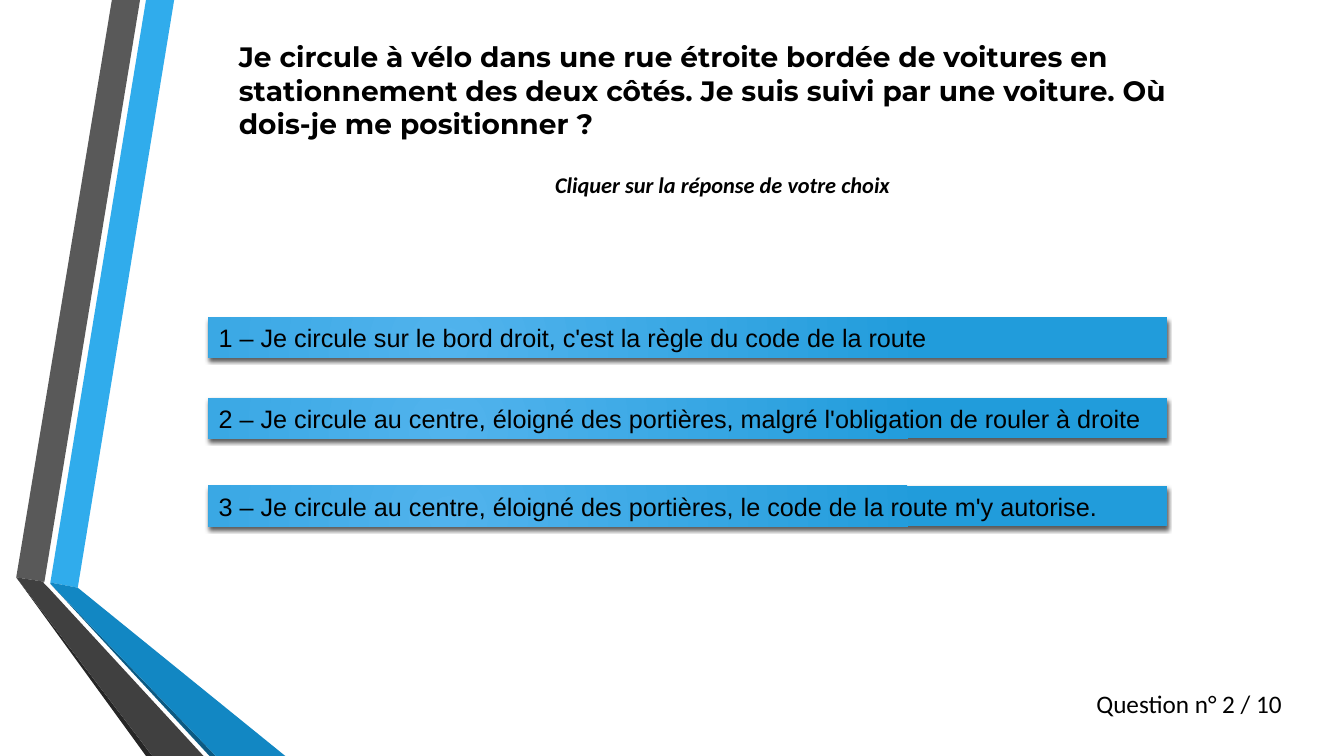
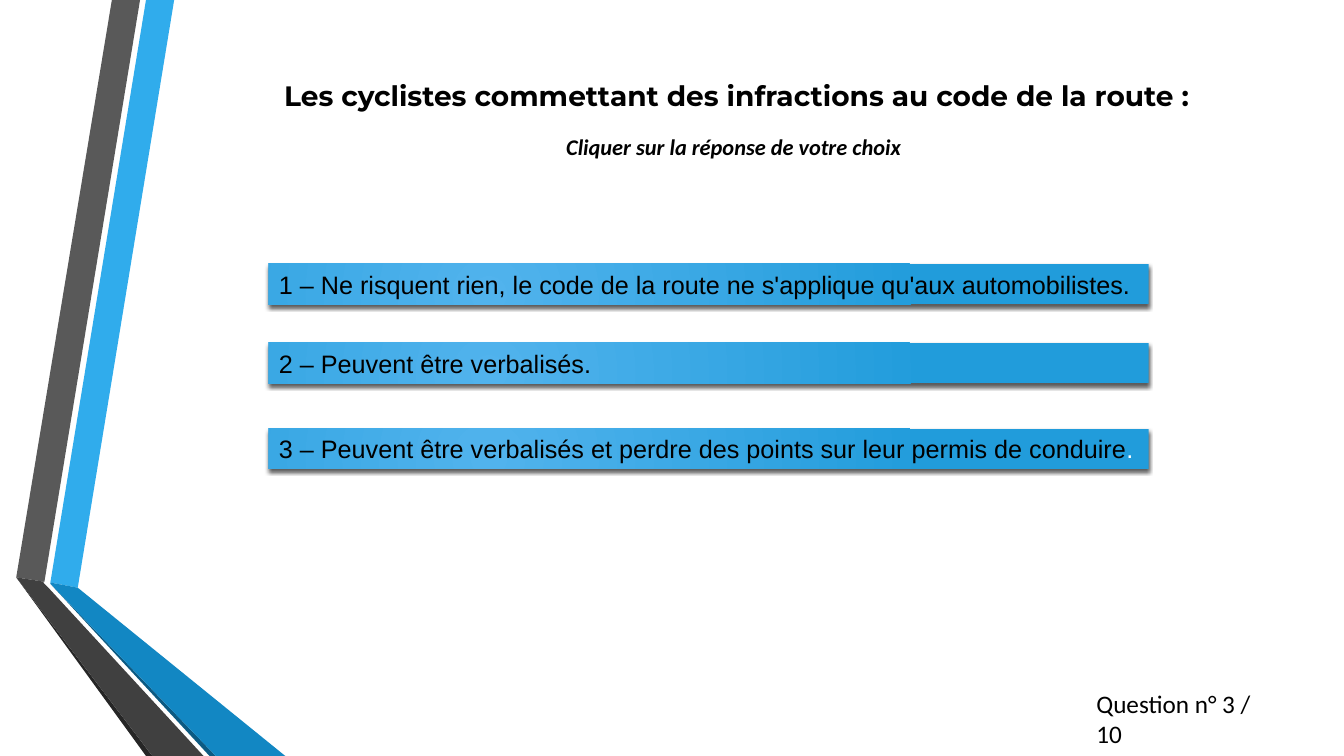
"""Build two multiple-choice quiz slides about cycling and the highway code."""
from dataclasses import dataclass

from lxml import etree
from pptx import Presentation
from pptx.dml.color import RGBColor
from pptx.enum import shapes, text as text_enum
from pptx.oxml import ns
from pptx.util import Cm, Pt

BLACK = RGBColor(0x00, 0x00, 0x00)
WHITE = RGBColor(0xFF, 0xFF, 0xFF)
SKY = RGBColor(0x30, 0xAC, 0xEC)
BLUE = RGBColor(0x12, 0x87, 0xC3)
NAVY = RGBColor(0x0C, 0x5A, 0x82)
GREY = RGBColor(0x59, 0x59, 0x59)
CHARCOAL = RGBColor(0x40, 0x40, 0x40)
INK = RGBColor(0x26, 0x26, 0x26)
BAR_LIGHT = RGBColor(0x51, 0xB3, 0xED)
BAR_DARK = RGBColor(0x21, 0x9C, 0xDB)

PROMPT = "Cliquer sur la réponse de votre choix"
QUESTION_COUNT = 10
LINE_HEIGHT = 1.02

RIBBON_UNIT = Cm(0.01)
RIBBONS = [
    (SKY, [(127, 1468), (196, 1481), (439, 0), (368, 0)]),
    (GREY, [(353, 0), (282, 0), (41, 1455), (112, 1466)]),
    (INK, [(41, 1455), (368, 1905), (384, 1905)]),
    (NAVY, [(127, 1471), (528, 1905), (544, 1905)]),
    (BLUE, [(127, 1471), (544, 1905), (719, 1905), (196, 1481), (127, 1468)]),
    (CHARCOAL, [(513, 1905), (122, 1481), (109, 1468), (112, 1466),
                (41, 1455), (384, 1905)]),
]


@dataclass
class Question:
    number: int
    title: str
    title_box: tuple
    prompt_corner: tuple
    footer_width: float
    bar_left: float
    bar_width: float
    answers: list
    white_ending: str = ""


QUESTIONS = [
    Question(
        number=2,
        title="Je circule à vélo dans une rue étroite bordée de voitures en "
              "stationnement des deux côtés. Je suis suivi par une voiture. "
              "Où dois-je me positionner ?",
        title_box=(5.77, 0.86, 24.38, 2.82),
        prompt_corner=(13.74, 4.19),
        footer_width=5.2,
        bar_left=5.26,
        bar_width=24.16,
        answers=[
            (8, "Je circule sur le bord droit, c'est la règle du code de la route"),
            (10.03, "Je circule au centre, éloigné des portières, "
                    "malgré l'obligation de rouler à droite"),
            (12.24, "Je circule au centre, éloigné des portières, "
                    "le code de la route m'y autorise."),
        ],
    ),
    Question(
        number=3,
        title="Les cyclistes commettant des infractions au code de la route :",
        title_box=(6.91, 1.85, 24.94, 1.12),
        prompt_corner=(14.02, 3.23),
        footer_width=5.1,
        bar_left=6.78,
        bar_width=22.17,
        answers=[
            (6.65, "Ne risquent rien, le code de la route "
                   "ne s'applique qu'aux automobilistes."),
            (8.64, "Peuvent être verbalisés."),
            (10.8, "Peuvent être verbalisés et perdre des points "
                   "sur leur permis de conduire"),
        ],
        white_ending=".",
    ),
]


def write(shape, text, font="Calibri", size=18, color=BLACK, bold=False,
          italic=False, anchor=text_enum.MSO_ANCHOR.TOP):
    """Append a formatted run to the first paragraph of a shape."""
    frame = shape.text_frame
    frame.word_wrap = True
    frame.vertical_anchor = anchor
    paragraph = frame.paragraphs[0]
    paragraph.alignment = text_enum.PP_ALIGN.LEFT
    run = paragraph.add_run()
    run.text = text
    run.font.name = font
    run.font.size = Pt(size)
    run.font.bold = bold
    run.font.italic = italic
    run.font.color.rgb = color


def add_label(slide, box, text, **style):
    """Add a text box at the given left, top, width and height."""
    write(slide.shapes.add_textbox(*map(Cm, box)), text, **style)


def add_ribbons(slide):
    """Draw the folded ribbons along the left edge."""
    for color, points in RIBBONS:
        builder = slide.shapes.build_freeform(*points[0], scale=RIBBON_UNIT)
        builder.add_line_segments(points[1:], close=True)
        ribbon = builder.convert_to_shape()
        ribbon.shadow.inherit = False
        ribbon.fill.solid()
        ribbon.fill.fore_color.rgb = color
        ribbon.line.fill.background()


def apply_radial_gradient(shape):
    """Fill a shape with a circular gradient from light to dark blue."""
    shape.fill.gradient()
    for stop, color in zip(shape.fill.gradient_stops, (BAR_LIGHT, BAR_DARK)):
        stop.color.rgb = color
    gradient = shape.element.spPr.find(ns.qn("a:gradFill"))
    gradient.remove(gradient.find(ns.qn("a:lin")))
    circle = etree.SubElement(gradient, ns.qn("a:path"), path="circle")
    etree.SubElement(circle, ns.qn("a:fillToRect"),
                     l="50000", t="100000", r="100000", b="50000")


def apply_drop_shadow(shape):
    """Give a shape a soft black shadow straight below it."""
    shape.shadow.inherit = False
    effects = shape.element.spPr.find(ns.qn("a:effectLst"))
    shadow = etree.SubElement(effects, ns.qn("a:outerShdw"),
                              blurRad=str(Pt(3)), dist=str(Pt(2)),
                              dir="5400000", algn="ctr", rotWithShape="0")
    color = etree.SubElement(shadow, ns.qn("a:srgbClr"), val=str(BLACK))
    etree.SubElement(color, ns.qn("a:alpha"), val="64000")


def add_answer_bar(slide, box, text, ending=""):
    """Add an answer bar, with an optional white ending to its text."""
    bar = slide.shapes.add_shape(shapes.MSO_SHAPE.RECTANGLE, *map(Cm, box))
    apply_radial_gradient(bar)
    bar.line.fill.background()
    apply_drop_shadow(bar)
    style = {"font": "Arial", "anchor": text_enum.MSO_ANCHOR.MIDDLE}
    write(bar, text, **style)
    if ending:
        write(bar, ending, color=WHITE, **style)


def add_question(presentation, question):
    """Add one complete question slide."""
    slide = presentation.slides.add_slide(presentation.slide_layouts[6])
    add_ribbons(slide)
    add_label(slide, question.title_box, question.title, font="Montserrat",
              size=20, bold=True, anchor=text_enum.MSO_ANCHOR.MIDDLE)
    add_label(slide, (27.38, 17.22, question.footer_width, LINE_HEIGHT),
              f"Question n° {question.number} / {QUESTION_COUNT}")
    add_label(slide, (*question.prompt_corner, 9.14, 0.94), PROMPT,
              size=16, bold=True, italic=True)
    for number, (top, answer) in enumerate(question.answers, start=1):
        is_last = number == len(question.answers)
        add_answer_bar(
            slide, (question.bar_left, top, question.bar_width, LINE_HEIGHT),
            f"{number} – {answer}", question.white_ending if is_last else "")


def main():
    """Create the presentation and save it."""
    presentation = Presentation()
    presentation.slide_width = Cm(33.87)
    presentation.slide_height = Cm(19.05)
    for question in QUESTIONS:
        add_question(presentation, question)
    presentation.save("out.pptx")


if __name__ == "__main__":
    main()
